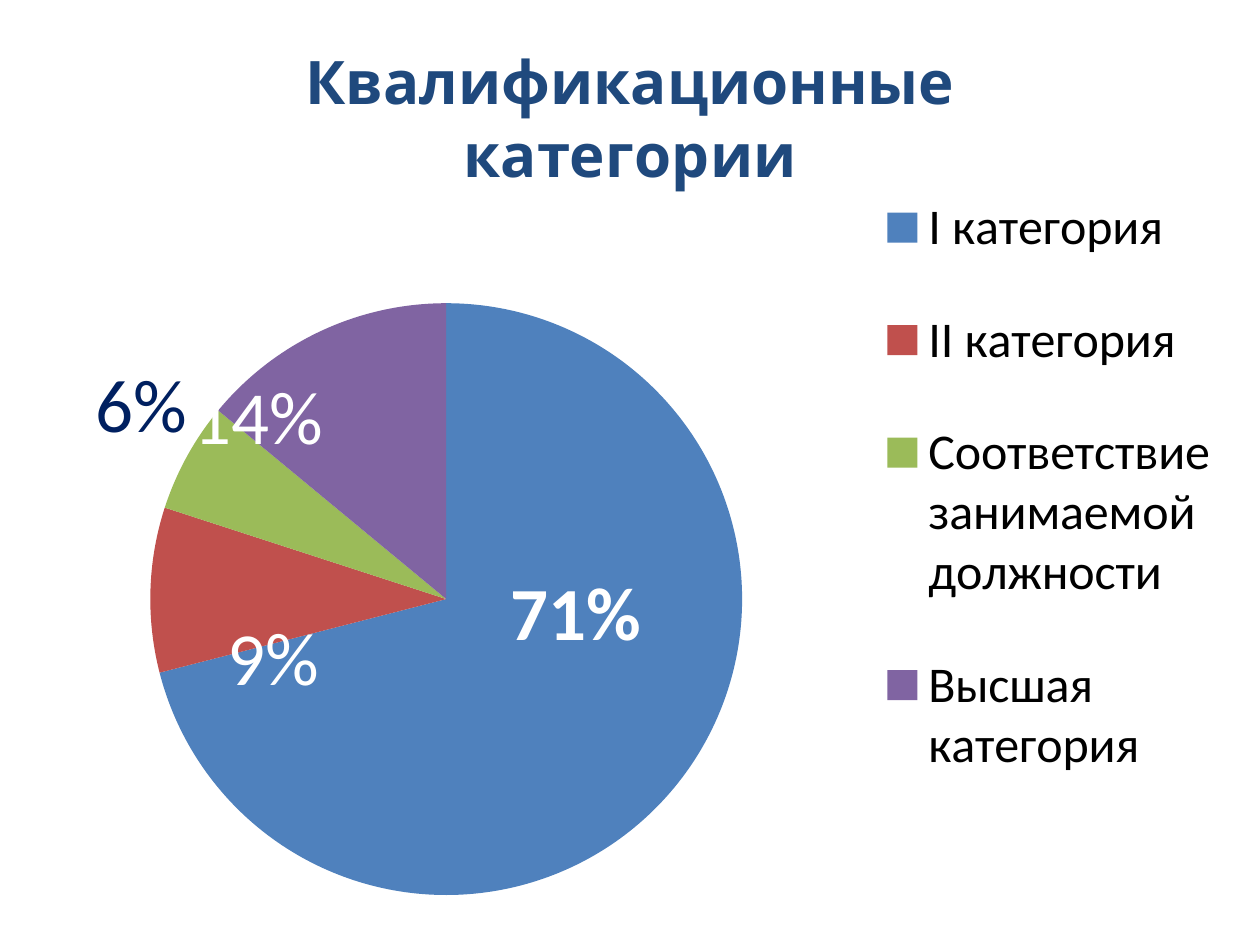
from lxml.etree import SubElement
from pptx import Presentation
from pptx.chart.data import CategoryChartData
from pptx.dml.color import RGBColor
from pptx.enum.chart import XL_CHART_TYPE, XL_LABEL_POSITION, XL_LEGEND_POSITION
from pptx.oxml import parse_xml
from pptx.oxml.ns import nsdecls, qn
from pptx.util import Pt

BLACK = RGBColor(0x00, 0x00, 0x00)
WHITE = RGBColor(0xFF, 0xFF, 0xFF)
NAVY = RGBColor(0x00, 0x20, 0x60)
TITLE_BLUE = RGBColor(0x1F, 0x49, 0x7D)
BLUE = RGBColor(0x4F, 0x81, 0xBD)
RED = RGBColor(0xC0, 0x50, 0x4D)
GREEN = RGBColor(0x9B, 0xBB, 0x59)
PURPLE = RGBColor(0x80, 0x64, 0xA2)

# Category, percentage, slice colour, label colour, label shift (chart fractions)
CATEGORIES = [
    ("I категория", 71, BLUE, WHITE, (0.01, -0.08)),
    ("II категория", 9, RED, WHITE, (-0.02, 0.07)),
    ("Соответствие занимаемой должности", 6, GREEN, NAVY, (-0.14, -0.13)),
    ("Высшая категория", 14, PURPLE, WHITE, (-0.1, -0.05)),
]


def make_layout(**settings):
    layout = parse_xml(f"<c:layout {nsdecls('c')}><c:manualLayout/></c:layout>")
    for name, value in settings.items():
        SubElement(layout[0], qn(f"c:{name}")).set("val", str(value))
    return layout


presentation = Presentation()
presentation.slide_width = Pt(1008)
presentation.slide_height = Pt(756)
slide = presentation.slides.add_slide(presentation.slide_layouts[6])

# Pie chart
chart_data = CategoryChartData()
chart_data.categories = [category[0] for category in CATEGORIES]
chart_data.add_series("Series 1", [category[1] for category in CATEGORIES])
chart = slide.shapes.add_chart(
    XL_CHART_TYPE.PIE, Pt(4), Pt(4), Pt(1000), Pt(748), chart_data
).chart
chart.font.name = "Calibri"
chart.font.size = Pt(18)
chart.font.color.rgb = BLACK
plot = chart.plots[0]
plot.vary_by_categories = True
plot_area = chart._chartSpace.chart.plotArea
for old_layout in plot_area.findall(qn("c:layout")):
    plot_area.remove(old_layout)
plot_area.insert(0, make_layout(
    layoutTarget="inner", xMode="edge", yMode="edge", x=0.116, y=0.319, w=0.474, h=0.633))

# Title
chart.has_title = True
chart.chart_title.include_in_layout = False
title_run = chart.chart_title.text_frame.paragraphs[0].add_run()
title_run.text = "Квалификационные категории"
title_run.font.name = "Cabin"
title_run.font.size = Pt(48)
title_run.font.bold = True
title_run.font.color.rgb = TITLE_BLUE

# Legend
chart.has_legend = True
legend = chart.legend
legend.position = XL_LEGEND_POSITION.RIGHT
legend.include_in_layout = False
legend.font.name = "Calibri"
legend.font.size = Pt(40)
legend.font.color.rgb = BLACK
for old_layout in legend._element.findall(qn("c:layout")):
    legend._element.remove(old_layout)
legend._element.find(qn("c:legendPos")).addnext(make_layout(
    xMode="edge", yMode="edge", x=0.69, y=0.15, w=0.29, h=0.73))

# Shared label settings
series = plot.series[0]
labels = series.data_labels
labels.show_percentage = True
labels.show_value = False
labels.number_format = "0.00%"
labels.number_format_is_linked = False
labels.font.size = Pt(60)
labels.font.bold = True
labels.font.color.rgb = NAVY
for leader_lines in labels._element.findall(qn("c:showLeaderLines")):
    leader_lines.set("val", "0")

# Slices and their labels
for index, (name, value, color, label_color, (shift_x, shift_y)) in enumerate(CATEGORIES):
    point = series.points[index]
    point.format.fill.solid()
    point.format.fill.fore_color.rgb = color
    label = point.data_label
    if index == 0:
        font = label.font
        font.bold = True
    else:
        run = label.text_frame.paragraphs[0].add_run()
        run.text = f"{value}%"
        font = run.font
        font.bold = False
    font.name = "Calibri"
    font.size = Pt(60)
    font.color.rgb = label_color
    label.position = XL_LABEL_POSITION.CENTER
    element = labels._element.findall(qn("c:dLbl"))[index]
    for old_layout in element.findall(qn("c:layout")):
        element.remove(old_layout)
    element.insert(1, make_layout(x=shift_x, y=shift_y))
    if index == 0:
        element.insert(2, parse_xml(
            f'<c:numFmt {nsdecls("c")} formatCode="0%" sourceLinked="0"/>'))
    element.find(qn("c:showVal")).set("val", "0")
    element.find(qn("c:showPercent")).set("val", "1")

presentation.save("out.pptx")
